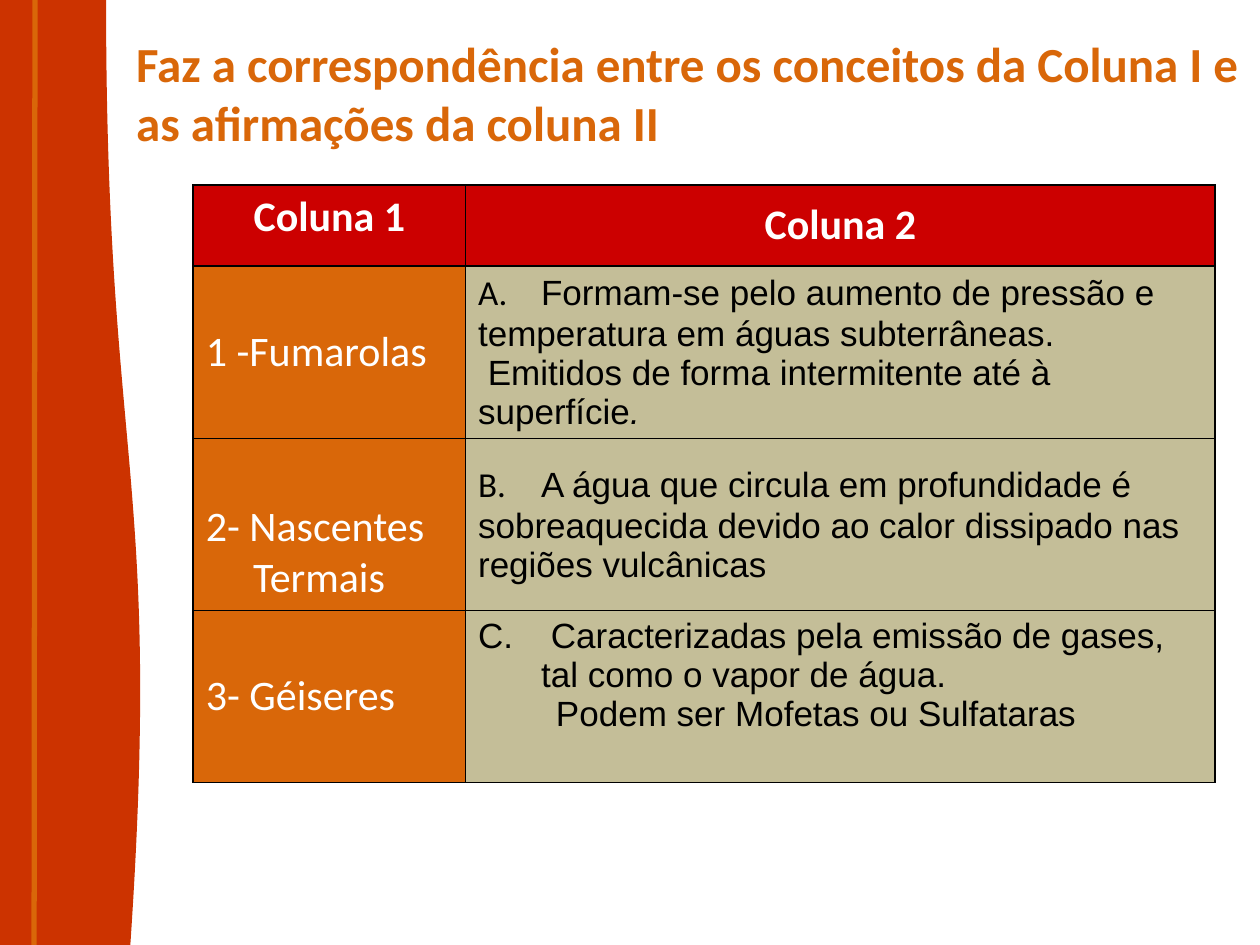
"""Build a matching-exercise slide about volcanic phenomena."""
from dataclasses import dataclass

from lxml import etree
from pptx import Presentation
from pptx import util as u
from pptx.dml.color import RGBColor
from pptx.enum import shapes, text
from pptx.oxml.ns import qn


@dataclass(frozen=True)
class Theme:
    """Colours, fonts and type sizes of the slide."""
    orange: str = "D96709"
    wave: str = "CC3300"
    header: str = "CC0000"
    sand: str = "C4BE98"
    white: str = "FFFFFF"
    black: str = "000000"
    heading_font: str = "Calibri"
    body_font: str = "Arial"
    title_size: int = 28
    concept_size: int = 24
    statement_size: int = 20


THEME = Theme()
TOP, MIDDLE, BOTTOM = (text.MSO_ANCHOR.TOP, text.MSO_ANCHOR.MIDDLE,
                       text.MSO_ANCHOR.BOTTOM)
HANG = 27
CONCEPTS = [("1 -Fumarolas", MIDDLE), ("2- Nascentes Termais", BOTTOM),
            ("3- Géiseres", MIDDLE)]


def add_run(paragraph, words, size, color, font=THEME.heading_font, bold=False, italic=False):
    """Append one formatted run to a paragraph."""
    run = paragraph.add_run()
    run.text = words
    run.font.size, run.font.name = u.Pt(size), font
    run.font.bold, run.font.italic = bold, italic
    run.font.color.rgb = RGBColor.from_string(color)


def add_statement(paragraph, *pieces):
    """Append (words, font, italic) pieces in the statement style."""
    for words, font, italic in pieces:
        add_run(paragraph, words, THEME.statement_size, THEME.black, font, italic=italic)


def indent(paragraph, left=0, first=0, tab=None):
    """Set the indents of a paragraph and an optional tab stop."""
    properties = paragraph._p.get_or_add_pPr()
    properties.set("marL", str(u.Pt(left)))
    properties.set("indent", str(u.Pt(first)))
    if tab:
        stops = etree.SubElement(properties, qn("a:tabLst"))
        etree.SubElement(stops, qn("a:tab"), pos=str(u.Pt(tab)), algn="l")


def style_cell(cell, color, anchor):
    """Fill a cell, anchor its text and draw its four black borders."""
    cell.fill.solid()
    cell.fill.fore_color.rgb = RGBColor.from_string(color)
    cell.vertical_anchor = anchor
    properties = cell._tc.get_or_add_tcPr()
    for position, side in enumerate(("lnL", "lnR", "lnT", "lnB")):
        border = etree.Element(qn(f"a:{side}"), w=str(u.Pt(1)))
        fill = etree.SubElement(border, qn("a:solidFill"))
        etree.SubElement(fill, qn("a:srgbClr"), val=THEME.black)
        properties.insert(position, border)


def add_wave(slide):
    """Draw the wavy band and its stripe along the left edge."""
    wave = slide.shapes.add_shape(shapes.MSO_SHAPE.FLOWCHART_DOCUMENT,
                                  u.Pt(-242.6), u.Pt(217.4), u.Pt(540), u.Pt(105.1))
    wave.rotation = 270
    wave.shadow.inherit = False
    wave.fill.solid()
    wave.fill.fore_color.rgb = wave.line.color.rgb = RGBColor.from_string(THEME.wave)
    wave.line.width = u.Pt(3)
    stripe = slide.shapes.add_connector(shapes.MSO_CONNECTOR.STRAIGHT,
                                        u.Pt(20), u.Pt(0), u.Pt(19.5), u.Pt(540))
    stripe.line.color.rgb = RGBColor.from_string(THEME.orange)
    stripe.line.width = u.Pt(3)
    etree.SubElement(stripe._element.spPr, qn("a:effectLst"))


def add_title(slide):
    """Place and format the title."""
    title = slide.shapes.title
    title.left, title.top, title.width, title.height = map(u.Pt, (70.6, 15.5, 649.4, 75))
    frame = title.text_frame
    frame.word_wrap = True
    frame.auto_size = text.MSO_AUTO_SIZE.NONE
    frame.vertical_anchor = TOP
    paragraph = frame.paragraphs[0]
    paragraph.alignment = text.PP_ALIGN.LEFT
    add_run(paragraph, "Faz a correspondência entre os conceitos da Coluna I e "
            "as afirmações da coluna II", THEME.title_size, THEME.orange, bold=True)


def fill_statements(table):
    """Write the three statements of the second column."""
    body, heading = THEME.body_font, THEME.heading_font
    frames = [table.cell(row, 1).text_frame for row in (1, 2, 3)]
    first, second, third = (frame.paragraphs[0] for frame in frames)
    indent(first, tab=35.5)
    add_statement(first, ("A.\t", heading, False),
                  ("Formam-se pelo aumento de pressão e temperatura em águas "
                   "subterrâneas.", body, False))
    add_statement(frames[0].add_paragraph(),
                  (" Emitidos de forma intermitente até à superfície", body, False),
                  (".", body, True))
    indent(second, tab=39)
    add_statement(second, ("B.\t", heading, False),
                  ("A água que circula em profundidade é sobreaquecida devido ao "
                   "calor dissipado nas regiões vulcânicas", body, False))
    indent(third, 36, -36)
    add_statement(third, ("C.\t Caracterizadas pela emissão de gases, tal como o "
                          "vapor de água.", body, False))
    last = frames[2].add_paragraph()
    indent(last, 44.5)
    add_statement(last, ("Podem ser Mofetas ou Sulfataras", body, False))


def add_matching_table(slide):
    """Build the table of concepts and statements."""
    table = slide.shapes.add_table(4, 2, u.Pt(110.4), u.Pt(105.8),
                                   u.Pt(584), u.Pt(341)).table
    for column, width in zip(table.columns, (155.6, 428.4)):
        column.width = u.Pt(width)
    for row, height in zip(table.rows, (46.2, 98.3, 98.3, 98.3)):
        row.height = u.Pt(height)
    for column, anchor in enumerate((TOP, MIDDLE)):
        cell = table.cell(0, column)
        style_cell(cell, THEME.header, anchor)
        paragraph = cell.text_frame.paragraphs[0]
        paragraph.alignment = text.PP_ALIGN.CENTER
        indent(paragraph, HANG, -HANG)
        add_run(paragraph, f"Coluna {column + 1}", THEME.concept_size, THEME.white, bold=True)
    for row, (concept, anchor) in enumerate(CONCEPTS, start=1):
        cell = table.cell(row, 0)
        style_cell(cell, THEME.orange, anchor)
        paragraph = cell.text_frame.paragraphs[0]
        indent(paragraph, HANG, -HANG)
        add_run(paragraph, concept, THEME.concept_size, THEME.white)
        style_cell(table.cell(row, 1), THEME.sand, TOP if row == 3 else MIDDLE)
    fill_statements(table)


def main():
    """Create and save the presentation."""
    presentation = Presentation()
    presentation.slide_width, presentation.slide_height = u.Pt(720), u.Pt(540)
    slide = presentation.slides.add_slide(presentation.slide_layouts[5])
    add_matching_table(slide)
    add_title(slide)
    add_wave(slide)
    presentation.save("out.pptx")


if __name__ == "__main__":
    main()
